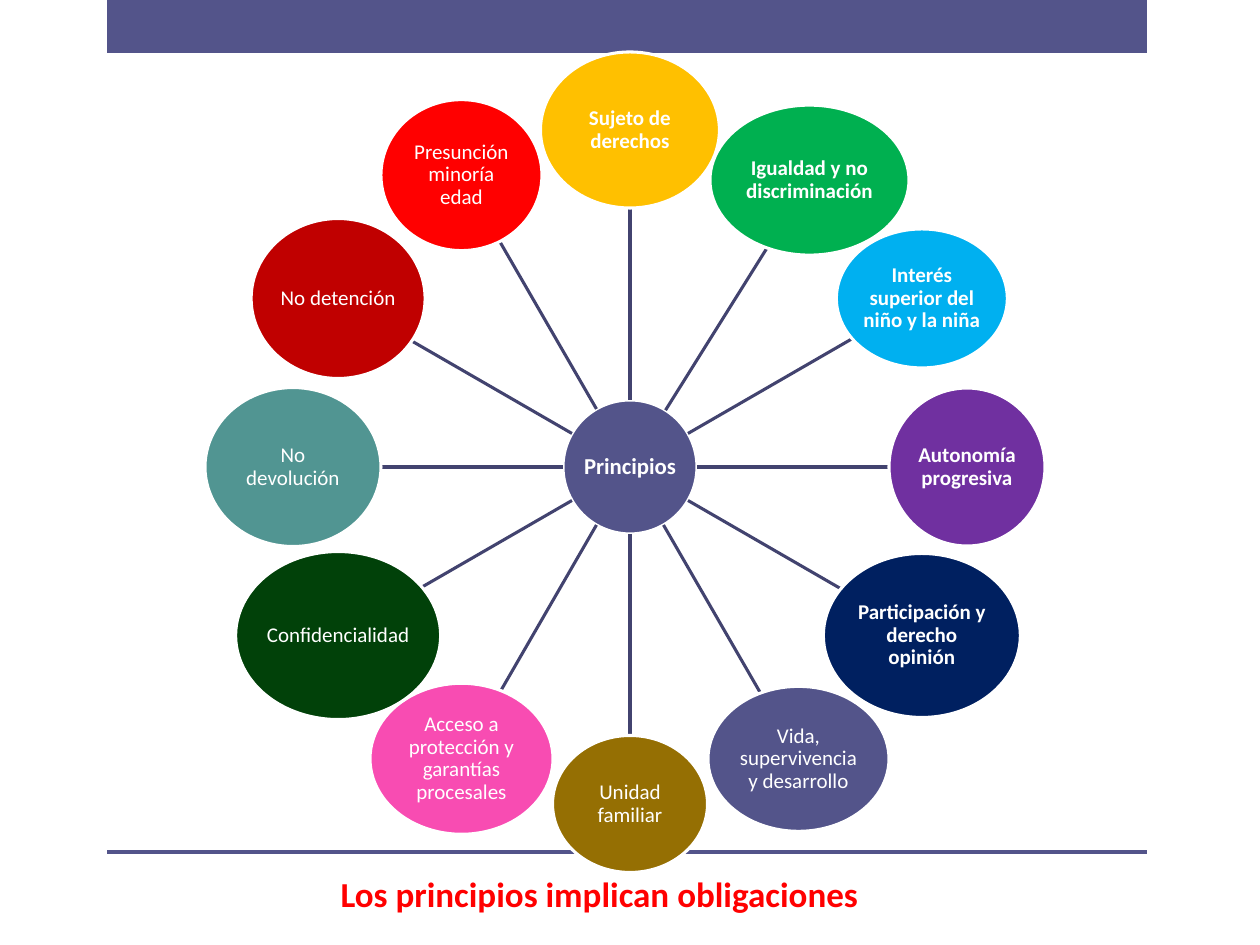
import math
from dataclasses import dataclass

from pptx import Presentation
from pptx.dml.color import RGBColor
from pptx.enum import shapes, text
from pptx.oxml.ns import qn
from pptx import util as u

PX_PER_INCH = 126
HUB_CENTRE = (630, 467)
HUB_SIZE = (134, 134)
RING_RADIUS = 337


@dataclass(frozen=True)
class Theme:
    font: str = "Calibri"
    accent: str = "53548A"
    spoke: str = "42436F"
    light: str = "FFFFFF"
    message: str = "FF0000"
    node_size: int = 12
    hub_size: int = 13
    message_size: int = 20
    line_width: float = 1.75


THEME = Theme()

# Label, fill, width, height, bold, shift from the ring; clockwise from the top
PRINCIPLES = [
    ("Sujeto de derechos", "FFC000", 179, 156, True, (0, 0)),
    ("Igualdad y no discriminación", "00B050", 199, 150, True, (11, 5)),
    ("Interés superior del niño y la niña", "00B0F0", 171, 139, True, (0, 0)),
    ("Autonomía progresiva", "7030A0", 156, 158, True, (0, 0)),
    ("Participación y derecho opinión", "002060", 197, 164, True, (0, 0)),
    ("Vida, supervivencia y desarrollo", THEME.accent, 181, 145, False, (0, 0)),
    ("Unidad familiar", "956F03", 155, 137, False, (0, 0)),
    ("Acceso a protección y garantías procesales", "F84CB2", 183, 151, False, (0, 0)),
    ("Confidencialidad", "014109", 205, 168, False, (0, 0)),
    ("No devolución", "519592", 176, 159, False, (0, 0)),
    ("No detención", "C00000", 174, 160, False, (0, 0)),
    ("Presunción minoría edad", "FF0000", 161, 151, False, (0, 0)),
]


def px(length):
    return u.Emu(round(length * u.Inches(1) / PX_PER_INCH))


def rgb(value):
    return RGBColor.from_string(value)


def write(shape, words, *, points, color=THEME.light, bold=False, spacing=1.0,
          anchor=text.MSO_ANCHOR.MIDDLE, inset=None):
    frame = shape.text_frame
    frame.word_wrap = True
    frame.vertical_anchor = anchor
    if inset is not None:
        frame.margin_left = frame.margin_right = px(inset)
        frame.margin_top = frame.margin_bottom = px(inset)
    paragraph = frame.paragraphs[0]
    paragraph.alignment = text.PP_ALIGN.CENTER
    paragraph.line_spacing = spacing
    run = paragraph.add_run()
    run.text = words
    run.font.name = THEME.font
    run.font.size = u.Pt(points)
    run.font.bold = bold
    run.font.color.rgb = rgb(color)


def add_bar(slide, left, top, width, height):
    bar = slide.shapes.add_shape(shapes.MSO_SHAPE.RECTANGLE,
                                 px(left), px(top), px(width), px(height))
    bar.shadow.inherit = False
    bar.fill.solid()
    bar.fill.fore_color.rgb = rgb(THEME.accent)
    bar.line.fill.background()


def add_circle(slide, centre, size, words, fill, **text_format):
    left, top = (c - s / 2 for c, s in zip(centre, size))
    circle = slide.shapes.add_shape(shapes.MSO_SHAPE.OVAL,
                                    px(left), px(top), px(size[0]), px(size[1]))
    circle.shadow.inherit = False
    circle.fill.solid()
    circle.fill.fore_color.rgb = rgb(fill)
    circle.line.color.rgb = rgb(THEME.light)
    circle.line.width = u.Pt(THEME.line_width)
    write(circle, words, spacing=0.9, inset=1, **text_format)


def edge_point(centre, size, target):
    """Point where the ellipse's outline meets the ray towards target."""
    dx, dy = target[0] - centre[0], target[1] - centre[1]
    reach = 1 / math.hypot(2 * dx / size[0], 2 * dy / size[1])
    return centre[0] + dx * reach, centre[1] + dy * reach


def add_spoke(slide, centre, size):
    start = edge_point(HUB_CENTRE, HUB_SIZE, centre)
    end = edge_point(centre, size, HUB_CENTRE)
    spoke = slide.shapes.add_connector(shapes.MSO_CONNECTOR.STRAIGHT,
                                       *(px(value) for value in start + end))
    spoke.line.color.rgb = rgb(THEME.spoke)
    spoke.line.width = u.Pt(THEME.line_width)
    properties = spoke._element.spPr
    properties.append(properties.makeelement(qn("a:effectLst"), {}))


def add_wheel(slide):
    add_circle(slide, HUB_CENTRE, HUB_SIZE, "Principios", THEME.accent,
               points=THEME.hub_size, bold=True)
    for index, (label, fill, width, height, bold, shift) in enumerate(PRINCIPLES):
        angle = math.tau * index / len(PRINCIPLES)
        centre = (HUB_CENTRE[0] + RING_RADIUS * math.sin(angle) + shift[0],
                  HUB_CENTRE[1] - RING_RADIUS * math.cos(angle) + shift[1])
        add_spoke(slide, centre, (width, height))
        add_circle(slide, centre, (width, height), label, fill,
                   points=THEME.node_size, bold=bold)


def add_message(slide, words):
    title = slide.shapes.title
    title.left, title.top, title.width, title.height = map(px, (292, 866, 615, 55))
    title.text_frame.auto_size = text.MSO_AUTO_SIZE.SHAPE_TO_FIT_TEXT
    write(title, words, points=THEME.message_size, color=THEME.message, bold=True,
          anchor=text.MSO_ANCHOR.TOP)


def main():
    presentation = Presentation()
    presentation.slide_width, presentation.slide_height = px(1260), px(945)
    slide = presentation.slides.add_slide(presentation.slide_layouts[5])

    # Top band and bottom rule
    add_bar(slide, 107, 0, 1040, 53)
    add_bar(slide, 107, 850, 1040, 4)

    # Hub, spokes and principles
    add_wheel(slide)

    # Closing message
    add_message(slide, "Los principios implican obligaciones")
    presentation.save("out.pptx")


if __name__ == "__main__":
    main()
